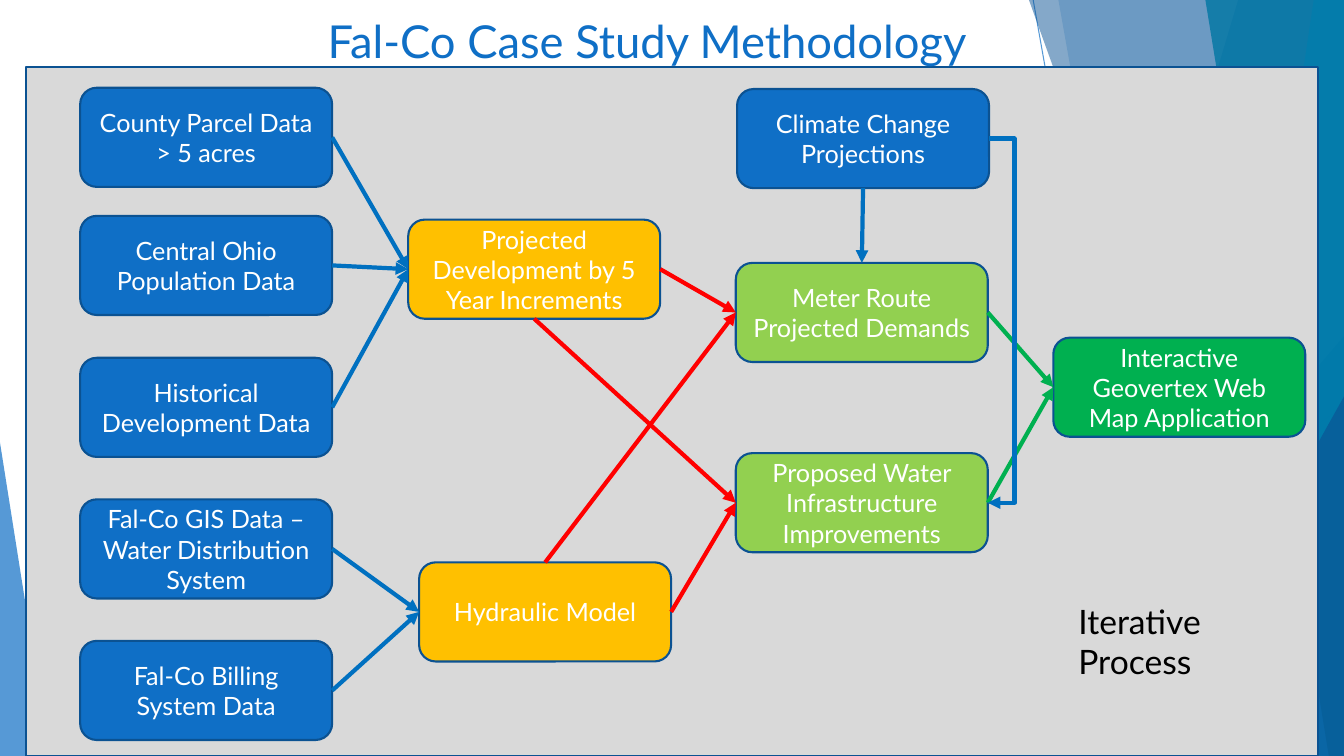
from dataclasses import dataclass
from typing import Any

import pptx
import pptx.dml.color
import pptx.enum.shapes
import pptx.enum.text
import pptx.oxml
import pptx.oxml.ns
import pptx.util

SHAPE = pptx.enum.shapes.MSO_SHAPE
CONNECTOR = pptx.enum.shapes.MSO_CONNECTOR
ANCHOR = pptx.enum.text.MSO_ANCHOR
ALIGN = pptx.enum.text.PP_ALIGN

# The slide is a grid of square cells, twelve to the inch.
COLUMNS, ROWS = 160, 90
CELL = pptx.util.Inches(1) // 12
BOX_COLUMNS, BOX_ROWS = 30, 11.8
DETOUR = 3  # columns the bent arrow swings out to the right

COLOURS = {
    "blue": "0F6FC6", "navy": "0B5394", "outline": "0B5292", "cyan": "009DD9",
    "teal": "0076A3", "panel": "D9D9D9", "amber": "FFC000", "lime": "92D050",
    "green": "00B050", "arrow": "0070C0", "red": "FF0000",
    "white": "FFFFFF", "black": "000000",
}
TOP, LEFT, BOTTOM, RIGHT = range(4)  # connection sites of a box


@dataclass(frozen=True)
class Facet:
    """A translucent backdrop polygon, with corners in grid cells."""
    colour: str
    opacity: int
    corners: tuple[tuple[float, float], ...]


@dataclass(frozen=True)
class Wedge:
    """A translucent right triangle; apex is 0 for left and 1 for right."""
    colour: str
    opacity: int
    place: tuple[float, float, float, float]
    apex: int


@dataclass(frozen=True)
class Step:
    name: str
    text: str
    colour: str
    column: float
    row: float


@dataclass(frozen=True)
class Flow:
    source: str
    source_site: int
    target: str
    target_site: int
    colour: str
    bent: bool = False


def band(colour: str, opacity: int, top: float, bottom: float) -> Facet:
    """Backdrop facet from a slanted left edge to the slide's right edge."""
    return Facet(colour, opacity, ((top, 0), (COLUMNS, 0), (COLUMNS, ROWS), (bottom, ROWS)))


BACKDROP_LINES = [((123, 0), (139, ROWS)), ((COLUMNS, 48.4), (97.5, ROWS))]
BACKDROP = [
    band("blue", 36, 147.4, 120.5),
    band("blue", 20, 126, 142),
    Wedge("navy", 66, (117.25, 40, 42.75, 50), 1),
    band("navy", 50, 122.5, 155),
    band("cyan", 70, 156.4, 143),
    band("teal", 80, 143.5, 158.2),
    Wedge("navy", 66, (136.1, 47.2, 23.9, 42.8), 1),
    Wedge("blue", 70, (0, 52.7, 5.9, 37.3), 0),
]
STEPS = [
    Step("parcels", "County Parcel Data > 5 acres", "blue", 9.55, 10.45),
    Step("population", "Central Ohio Population Data", "blue", 9.55, 25.7),
    Step("history", "Historical Development Data", "blue", 9.55, 42.6),
    Step("network", "Fal-Co GIS Data – Water Distribution System", "blue", 9.55, 59.45),
    Step("hydraulics", "Hydraulic Model", "amber", 49.9, 66.95),
    Step("billing", "Fal-Co Billing System Data", "blue", 9.55, 76.3),
    Step("map", "Interactive Geovertex Web Map Application", "green", 125.4, 40.2),
    Step("growth", "Projected Development by 5 Year Increments", "amber", 48.6, 26.15),
    Step("works", "Proposed Water Infrastructure Improvements", "lime", 87.6, 53.95),
    Step("demands", "Meter Route Projected Demands", "lime", 87.6, 31.3),
    Step("climate", "Climate Change Projections", "blue", 87.75, 10.6),
]
FLOWS = [
    *(Flow(name, RIGHT, "growth", LEFT, "arrow") for name in ("parcels", "population", "history")),
    *(Flow(name, RIGHT, "hydraulics", LEFT, "arrow") for name in ("network", "billing")),
    Flow("growth", RIGHT, "demands", LEFT, "red"),
    Flow("hydraulics", TOP, "demands", LEFT, "red"),
    Flow("hydraulics", RIGHT, "works", LEFT, "red"),
    Flow("growth", BOTTOM, "works", LEFT, "red"),
    *(Flow(name, RIGHT, "map", LEFT, "green") for name in ("demands", "works")),
    Flow("climate", BOTTOM, "demands", TOP, "arrow"),
    Flow("climate", RIGHT, "works", RIGHT, "arrow", bent=True),
]


def cells(*counts: float) -> list[pptx.util.Emu]:
    return [pptx.util.Emu(round(count * CELL)) for count in counts]


def apply_format(target: Any, values: dict[str, Any]) -> None:
    for name, value in values.items():
        setattr(target, name, value)


def paint(fill: Any, colour: str, opacity: int = 100) -> None:
    fill.solid()
    fill.fore_color.rgb = pptx.dml.color.RGBColor.from_string(COLOURS[colour])
    if opacity < 100:
        for tone in fill._xPr.iter(pptx.oxml.ns.qn("a:srgbClr")):
            add_child(tone, "a:alpha", val=str(opacity * 1000))


def add_child(parent: Any, tag: str, **attributes: str) -> Any:
    child = pptx.oxml.parse_xml(f"<{tag} {pptx.oxml.ns.nsdecls('a')}/>")
    for name, value in attributes.items():
        child.set(name, value)
    parent.append(child)
    return child


def write(shape: Any, text: str, size: float, colour: str, align: Any, anchor: Any) -> None:
    frame = shape.text_frame
    apply_format(frame, {"word_wrap": True, "vertical_anchor": anchor,
                         "auto_size": pptx.enum.text.MSO_AUTO_SIZE.NONE})
    para = frame.paragraphs[0]
    para.alignment = align
    span = para.add_run()
    span.text = text
    apply_format(span.font, {"name": "Lato", "size": pptx.util.Pt(size)})
    paint(span.font.fill, colour)


def style_shape(shape: Any, colour: str, opacity: int = 100, outlined: bool = False) -> None:
    shape.shadow.inherit = False
    paint(shape.fill, colour, opacity)
    if outlined:
        paint(shape.line.fill, "outline")
        shape.line.width = pptx.util.Pt(1.5)
    else:
        shape.line.fill.background()


def style_line(line: Any, colour: str, points: float, opacity: int = 100) -> None:
    paint(line.line.fill, colour, opacity)
    line.line.width = pptx.util.Pt(points)
    add_child(line.element.spPr, "a:effectLst")


def draw_backdrop(page: Any) -> None:
    for start, end in BACKDROP_LINES:
        line = page.shapes.add_connector(CONNECTOR.STRAIGHT, *cells(*start, *end))
        style_line(line, "blue", 0.75, 70)
    for part in BACKDROP:
        if isinstance(part, Wedge):
            shape = page.shapes.add_shape(SHAPE.ISOSCELES_TRIANGLE, *cells(*part.place))
            shape.adjustments[0] = part.apex
        else:
            first, *others = [tuple(cells(*corner)) for corner in part.corners]
            outline = page.shapes.build_freeform(*first)
            outline.add_line_segments(others, close=True)
            shape = outline.convert_to_shape()
        style_shape(shape, part.colour, part.opacity)


def draw_step(page: Any, step: Step) -> Any:
    place = cells(step.column, step.row, BOX_COLUMNS, BOX_ROWS)
    box = page.shapes.add_shape(SHAPE.ROUNDED_RECTANGLE, *place)
    style_shape(box, step.colour, outlined=True)
    write(box, step.text, 18, "white", ALIGN.CENTER, ANCHOR.MIDDLE)
    return box


def draw_flow(page: Any, flow: Flow, boxes: dict[str, Any]) -> None:
    kind = CONNECTOR.ELBOW if flow.bent else CONNECTOR.STRAIGHT
    arrow = page.shapes.add_connector(kind, 0, 0, 0, 0)
    arrow.begin_connect(boxes[flow.source], flow.source_site)
    arrow.end_connect(boxes[flow.target], flow.target_site)
    if flow.bent:
        share = round(-DETOUR * CELL / arrow.width * 100000)
        guides = arrow.element.spPr.prstGeom.get_or_add_avLst()
        add_child(guides, "a:gd", name="adj1", fmla=f"val {share}")
    style_line(arrow, flow.colour, 3)
    add_child(arrow.line._get_or_add_ln(), "a:tailEnd", type="triangle")


def main() -> None:
    deck = pptx.Presentation()
    apply_format(deck, dict(zip(("slide_width", "slide_height"), cells(COLUMNS, ROWS))))
    page = deck.slides.add_slide(deck.slide_layouts[5])
    draw_backdrop(page)
    panel = page.shapes.add_shape(SHAPE.RECTANGLE, *cells(3.1, 7.95, 153.85, 82.05))
    style_shape(panel, "panel", outlined=True)
    boxes = {step.name: draw_step(page, step) for step in STEPS}
    for flow in FLOWS:
        draw_flow(page, flow, boxes)
    note = page.shapes.add_textbox(*cells(127.2, 70.9, 26.4, 10.9))
    write(note, "Iterative Process", 24, "black", ALIGN.LEFT, ANCHOR.TOP)
    title = page.shapes.title
    apply_format(title, dict(zip(("left", "top", "width", "height"), cells(37.8, 1, 81.4, 7.8))))
    write(title, "Fal-Co Case Study Methodology", 32.4, "blue", ALIGN.LEFT, ANCHOR.TOP)
    title.element.getparent().append(title.element)  # bring to front
    deck.save("out.pptx")


if __name__ == "__main__":
    main()
